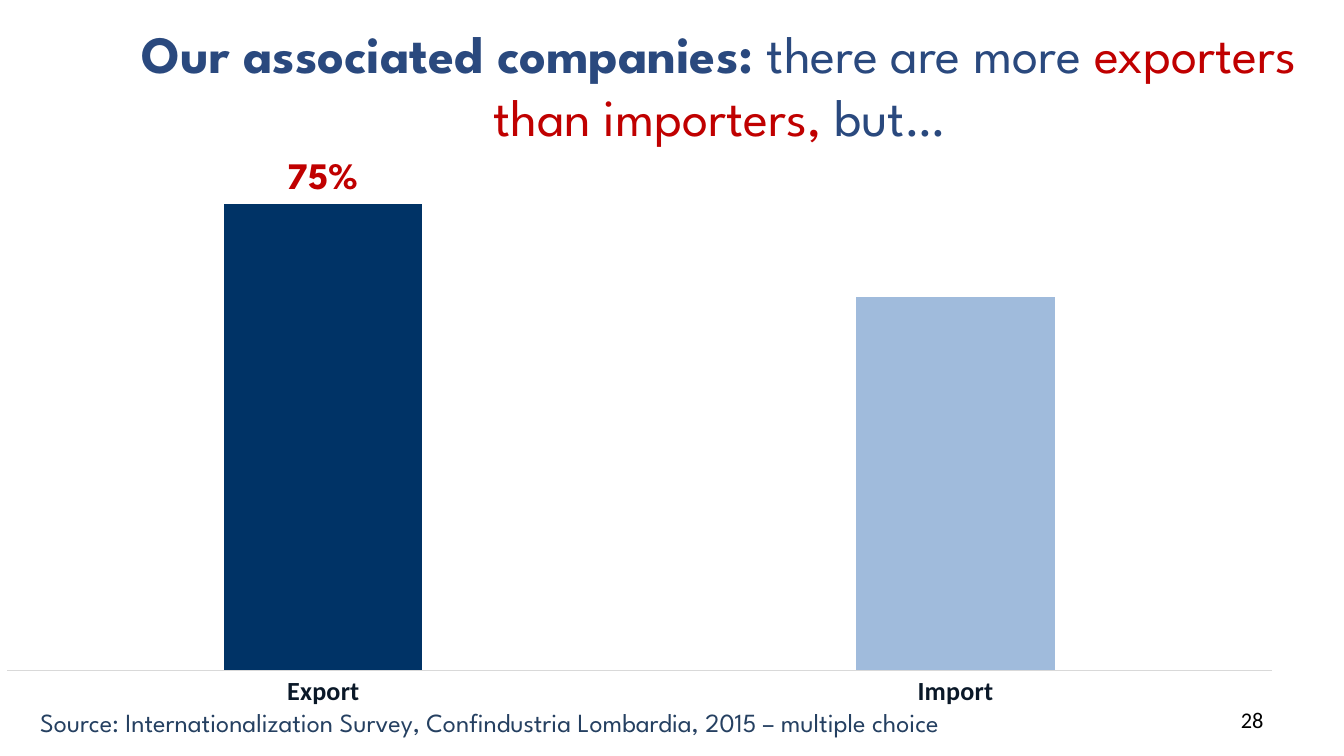
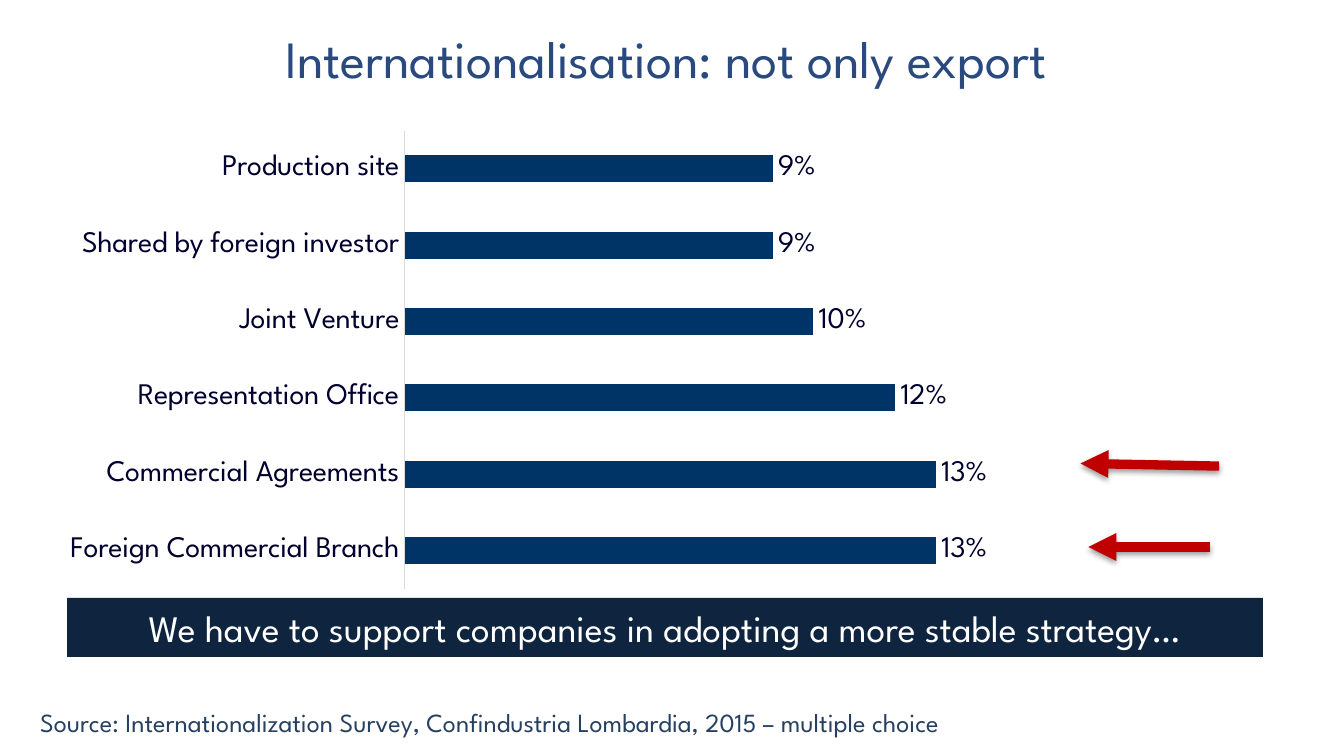
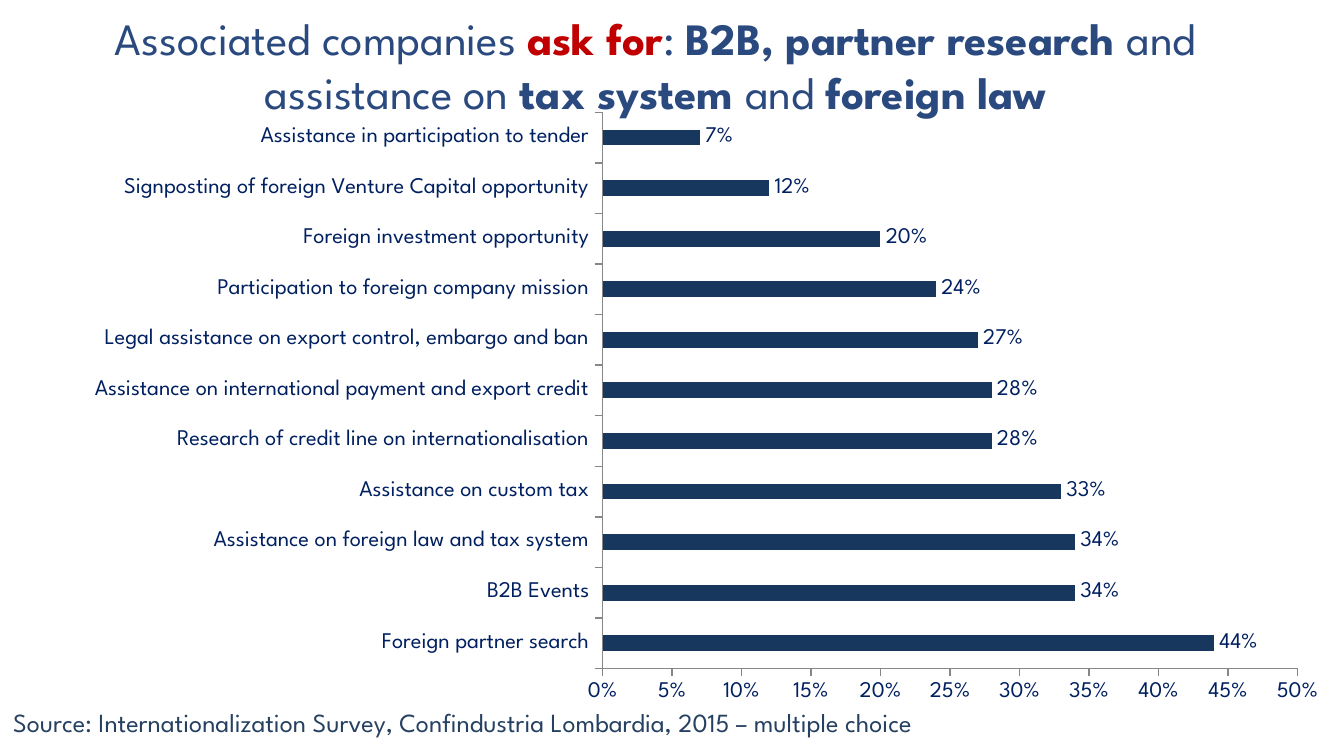
from lxml import etree
from pptx import Presentation
from pptx.chart.data import CategoryChartData
from pptx.dml.color import RGBColor
from pptx.enum.chart import XL_CHART_TYPE, XL_LABEL_POSITION, XL_TICK_MARK
from pptx.enum.shapes import MSO_CONNECTOR, MSO_SHAPE
from pptx.enum.text import MSO_ANCHOR, PP_ALIGN
from pptx.oxml import parse_xml
from pptx.oxml.ns import nsdecls, qn
from pptx.util import Cm, Pt

COLUMNS, BARS = XL_CHART_TYPE.COLUMN_CLUSTERED, XL_CHART_TYPE.BAR_CLUSTERED
OUTSIDE_END = XL_LABEL_POSITION.OUTSIDE_END
NO_TICK, TICK_OUT = XL_TICK_MARK.NONE, XL_TICK_MARK.OUTSIDE
LEFT, CENTER, RIGHT = PP_ALIGN.LEFT, PP_ALIGN.CENTER, PP_ALIGN.RIGHT
TOP, MIDDLE = MSO_ANCHOR.TOP, MSO_ANCHOR.MIDDLE

FONT, PLAIN_FONT = "League Spartan", "Calibri"
COLORS = {
    "title": "2A497E", "accent": "C00000", "source": "254061",
    "banner": "0F243E", "white": "FFFFFF", "black": "000000",
    "ink": "0A1828", "deep": "00002E", "navy": "002060",
    "bar": "003366", "light bar": "A0BBDC", "slate bar": "17375E",
    "pale axis": "D9D9D9", "grey axis": "878787",
}

SOURCE = ("Source: Internationalization Survey, Confindustria Lombardia, "
          "2015 – multiple choice")
BANNER = "We have to support companies in adopting a more stable strategy…"

# Title lines hold runs of (text, colour, bold)
TRADE_TITLE = [[
    ("Our associated companies: ", "title", True),
    ("there are more ", "title", False),
    ("exporters than importers, ", "accent", False),
    ("but…", "title", False),
]]
FORMS_TITLE = [[("Internationalisation: not only export", "title", False)]]
NEEDS_TITLE = [
    [("Associated companies ", "title", False), ("ask for", "accent", True),
     (": ", "title", False), ("B2B, partner research ", "title", True),
     ("and", "title", False)],
    [("assistance on ", "title", False), ("tax system ", "title", True),
     ("and ", "title", False), ("foreign law", "title", True)],
]

TRADE = {"Export": 0.75, "Import": 0.6}
FORMS = {
    "Foreign Commercial Branch": 0.13,
    "Commercial Agreements": 0.13,
    "Representation Office": 0.12,
    "Joint Venture": 0.1,
    "Shared by foreign investor": 0.09,
    "Production site": 0.09,
}
NEEDS = {
    "Foreign partner search": 0.44,
    "B2B Events": 0.34,
    "Assistance on foreign law and tax system": 0.34,
    "Assistance on custom tax": 0.33,
    "Research of credit line on internationalisation": 0.28,
    "Assistance on international payment and export credit": 0.28,
    "Legal assistance on export control, embargo and ban": 0.27,
    "Participation to foreign company mission": 0.24,
    "Foreign investment opportunity": 0.2,
    "Signposting of foreign Venture Capital opportunity": 0.12,
    "Assistance in participation to tender": 0.07,
}
# Arrows in cm: start x, start y, end x, end y
ARROWS = [(22.86, 10.34, 20.57, 10.34), (23.04, 8.81, 20.42, 8.76)]


def rgb(color):
    return RGBColor.from_string(COLORS[color])


def style_font(font, size, color, bold=False, name=FONT):
    values = {"size": Pt(size), "bold": bold, "name": name}
    for attribute, value in values.items():
        setattr(font, attribute, value)
    font.color.rgb = rgb(color)


def write(frame, lines, size, align, anchor=TOP, name=FONT):
    frame.word_wrap = True
    frame.vertical_anchor = anchor
    for number, runs in enumerate(lines):
        paragraph = frame.paragraphs[0] if number == 0 else frame.add_paragraph()
        paragraph.alignment = align
        for text, color, bold in runs:
            run = paragraph.add_run()
            run.text = text
            style_font(run.font, size, color, bold, name)


def add_text(slide, box, lines, size, align=LEFT, **options):
    frame = slide.shapes.add_textbox(*map(Cm, box)).text_frame
    write(frame, lines, size, align, **options)


def add_title(slide, box, lines, size=28):
    add_text(slide, box, lines, size, CENTER)


def add_source(slide, left=0.51):
    add_text(slide, (left, 13.23, 18.95, 0.86), [[(SOURCE, "source", False)]], 14)


def add_share_chart(slide, kind, box, shares, fill, text, size, gap, overlap,
                    top, axis="pale axis", tick=NO_TICK, name=FONT):
    """Add a one-series chart of percentages; its value axis is hidden."""
    data = CategoryChartData(number_format="0%")
    data.categories = list(shares)
    data.add_series("Series 1", list(shares.values()))
    chart = slide.shapes.add_chart(kind, *map(Cm, box), data).chart
    chart.has_title = chart.has_legend = False
    style_font(chart.font, size, text, name=name)

    plot = chart.plots[0]
    settings = {"gap_width": gap, "overlap": overlap,
                "vary_by_categories": False, "has_data_labels": True}
    for attribute, value in settings.items():
        setattr(plot, attribute, value)
    plot.series[0].format.fill.solid()
    plot.series[0].format.fill.fore_color.rgb = rgb(fill)
    label_settings = {"show_value": True, "number_format": "0%",
                      "number_format_is_linked": False, "position": OUTSIDE_END}
    for attribute, value in label_settings.items():
        setattr(plot.data_labels, attribute, value)
    style_font(plot.data_labels.font, size, text)

    scale = {"minimum_scale": 0, "maximum_scale": top, "visible": False,
             "has_major_gridlines": False}
    for attribute, value in scale.items():
        setattr(chart.value_axis, attribute, value)
    chart.category_axis.major_tick_mark = tick
    chart.category_axis.format.line.color.rgb = rgb(axis)
    chart.category_axis.format.line.width = Pt(0.75)
    return chart


def place_plot(chart, x, y, w, h):
    """Fix the inner plot area, in fractions of the chart."""
    area = chart.element.find(".//" + qn("c:plotArea"))
    for layout in area.findall(qn("c:layout")):
        area.remove(layout)
    layout = etree.Element(qn("c:layout"))
    manual = etree.SubElement(layout, qn("c:manualLayout"))
    values = {"layoutTarget": "inner", "xMode": "edge", "yMode": "edge",
              "x": x, "y": y, "w": w, "h": h}
    for tag, value in values.items():
        etree.SubElement(manual, qn("c:" + tag)).set("val", str(value))
    area.insert(0, layout)


def add_arrow(slide, ends):
    arrow = slide.shapes.add_connector(MSO_CONNECTOR.STRAIGHT, *map(Cm, ends))
    arrow.line.color.rgb = rgb("accent")
    arrow.line.width = Pt(5)
    properties = arrow.element.spPr
    head = etree.SubElement(properties.find(qn("a:ln")), qn("a:tailEnd"))
    head.set("type", "triangle")
    properties.append(parse_xml(
        f'<a:effectLst {nsdecls("a")}><a:outerShdw blurRad="{Pt(3.1)}" '
        f'dist="{Pt(1.6)}" dir="5400000" rotWithShape="0">'
        f'<a:srgbClr val="{COLORS["black"]}"><a:alpha val="38000"/></a:srgbClr>'
        '</a:outerShdw></a:effectLst>'))


def add_banner(slide, box):
    banner = slide.shapes.add_shape(MSO_SHAPE.RECTANGLE, *map(Cm, box))
    banner.shadow.inherit = False
    banner.fill.solid()
    banner.fill.fore_color.rgb = rgb("banner")
    banner.line.fill.background()
    write(banner.text_frame, [[(BANNER, "white", False)]], 20, CENTER, MIDDLE)


def build_trade(slide):
    add_text(slide, (18.21, 13.23, 5.92, 0.76), [[("28", "black", False)]], 12,
             RIGHT, anchor=MIDDLE, name=PLAIN_FONT)
    chart = add_share_chart(slide, COLUMNS, (-0.36, 3.05, 24.89, 10.54), TRADE,
                            "light bar", "ink", 14, 219, -27, 0.8,
                            name=PLAIN_FONT)
    style_font(chart.category_axis.tick_labels.font, 14, "ink", True, PLAIN_FONT)
    style_font(chart.plots[0].data_labels.font, 14, "ink", True)
    export = chart.plots[0].series[0].points[0]
    export.format.fill.solid()
    export.format.fill.fore_color.rgb = rgb("bar")
    style_font(export.data_label.font, 20, "accent", True)
    export.data_label.position = OUTSIDE_END
    add_source(slide)
    add_title(slide, (1.78, 0.28, 23.62, 3.25), TRADE_TITLE)


def build_forms(slide):
    add_title(slide, (2.82, 0.38, 19.53, 1.45), FORMS_TITLE)
    add_share_chart(slide, BARS, (0.94, 2.29, 19.46, 9.02), FORMS,
                    "bar", "deep", 16, 182, 0, 0.16)
    for ends in ARROWS:
        add_arrow(slide, ends)
    add_banner(slide, (1.27, 11.3, 22.6, 1.12))
    add_source(slide)


def build_needs(slide):
    add_title(slide, (-0.36, 0.08, 25.5, 3.18), NEEDS_TITLE, 24)
    chart = add_share_chart(slide, BARS, (1.12, 2.11, 23.88, 12.24), NEEDS,
                            "slate bar", "navy", 12, 218, -15, 0.5,
                            "grey axis", TICK_OUT)
    scale = chart.value_axis
    scale.visible = True
    scale.major_unit = 0.05
    scale.major_tick_mark = TICK_OUT
    scale.tick_labels.number_format = "0%"
    scale.tick_labels.number_format_is_linked = False
    scale.format.line.color.rgb = rgb("grey axis")
    place_plot(chart, 0.43, 0, 0.55, 0.86)
    add_source(slide, 0)


def main():
    deck = Presentation()
    deck.slide_width, deck.slide_height = Cm(25.4), Cm(14.29)
    for build in (build_trade, build_forms, build_needs):
        build(deck.slides.add_slide(deck.slide_layouts[6]))
    deck.save("out.pptx")


if __name__ == "__main__":
    main()
